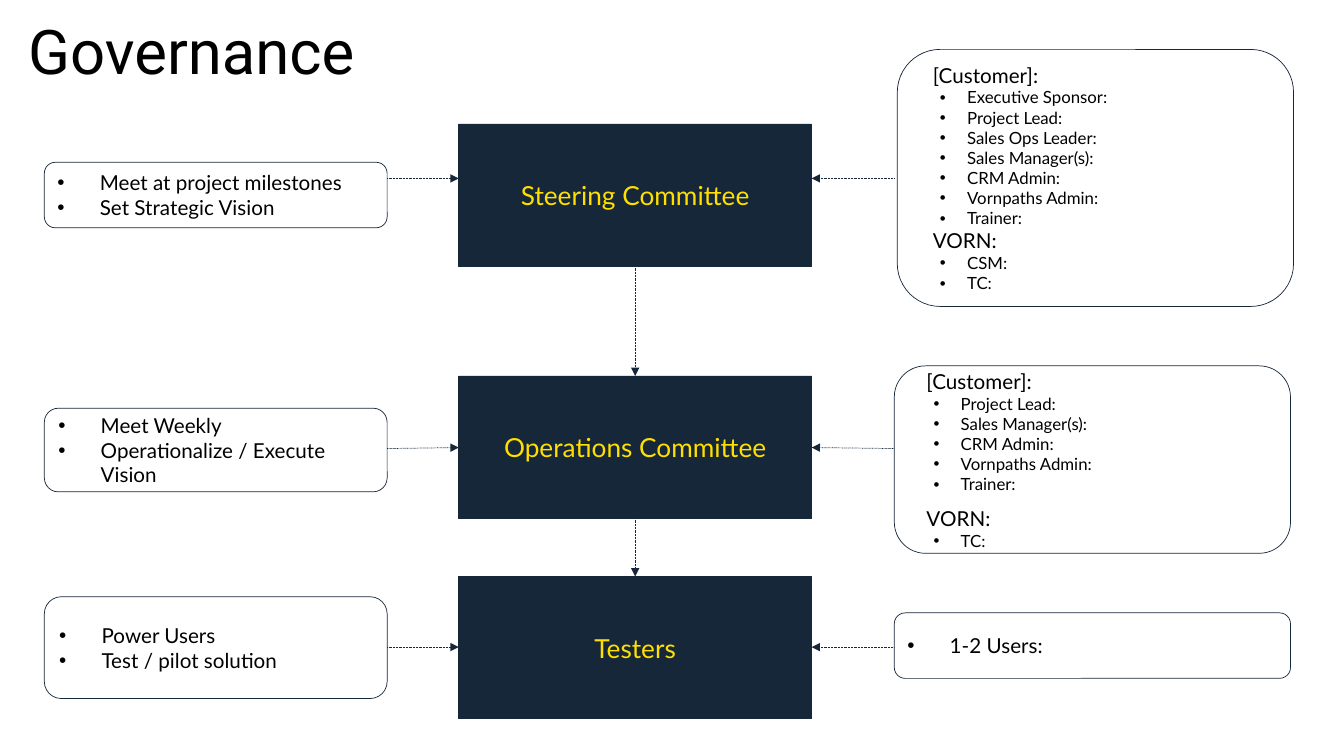
from lxml import etree
from pptx import Presentation
from pptx.dml.color import RGBColor
from pptx.enum.dml import MSO_LINE
from pptx.enum.shapes import MSO_CONNECTOR, MSO_SHAPE
from pptx.enum.text import MSO_ANCHOR, MSO_AUTO_SIZE, PP_ALIGN
from pptx.oxml.ns import qn
from pptx.util import Pt

RECTANGLE, ROUNDED = MSO_SHAPE.RECTANGLE, MSO_SHAPE.ROUNDED_RECTANGLE
STRAIGHT = MSO_CONNECTOR.STRAIGHT
DOTTED = MSO_LINE.ROUND_DOT
LEFT, CENTER = PP_ALIGN.LEFT, PP_ALIGN.CENTER
TOP, MIDDLE = MSO_ANCHOR.TOP, MSO_ANCHOR.MIDDLE
NO_AUTOFIT = MSO_AUTO_SIZE.NONE

PX = 9144
COLORS = {"navy": "162739", "yellow": "FFDF00", "white": "FFFFFF", "black": "000000"}
BODY_FONT, TITLE_FONT = "Lato", "Roboto"
TITLE_SIZE, COMMITTEE_SIZE, BODY_SIZE, ROLE_SIZE = 44, 18.7, 14.7, 12

COMMITTEE_X, COMMITTEE_W, COMMITTEE_H = 455, 350, 141
DUTIES_X, DUTIES_W = 44, 340
MEMBERS_X, MEMBERS_W = 887, 393
FLOW_X = COMMITTEE_X + COMMITTEE_W // 2

TIERS = [
    {
        "name": "Steering Committee", "top": 123, "arrow_y": (177, 177),
        "duties": (161, 65, ["Meet at project milestones", "Set Strategic Vision"]),
    },
    {
        "name": "Operations Committee", "top": 373, "arrow_y": (445, 444),
        "duties": (405, 83, ["Meet Weekly", "Operationalize / Execute Vision"]),
    },
    {
        "name": "Testers", "top": 572, "arrow_y": (642, 642),
        "duties": (592, 101, ["Power Users", "Test / pilot solution"]),
    },
]

STEERING_TEAMS = [
    ("[Customer]:", ["Executive Sponsor:", "Project Lead:", "Sales Ops Leader:",
                     "Sales Manager(s):", "CRM Admin:", "Vornpaths Admin:", "Trainer:"]),
    ("VORN:", ["CSM:", "TC:"]),
]
OPERATIONS_TEAMS = [
    ("[Customer]:", ["Project Lead:", "Sales Manager(s):", "CRM Admin:",
                     "Vornpaths Admin:", "Trainer:"]),
    ("VORN:", ["TC:"]),
]


def rgb(color):
    return RGBColor.from_string(COLORS[color])


def add_run(paragraph, text, size, color, font=BODY_FONT):
    run = paragraph.add_run()
    run.text = text
    run.font.size = Pt(size)
    run.font.name = font
    run.font.color.rgb = rgb(color)


def add_box(slide, preset, x, y, w, h, fill):
    box = slide.shapes.add_shape(preset, x * PX, y * PX, w * PX, h * PX)
    box.shadow.inherit = False
    box.fill.solid()
    box.fill.fore_color.rgb = rgb(fill)
    box.line.color.rgb = rgb("navy")
    box.line.width = Pt(0.5)
    frame = box.text_frame
    frame.word_wrap = True
    frame.vertical_anchor = MIDDLE
    return frame


def add_line(frame, text, size, margin, hanging=0):
    first = frame.paragraphs[0]
    paragraph = frame.add_paragraph() if first.runs else first
    paragraph.alignment = LEFT
    properties = paragraph._p.get_or_add_pPr()
    properties.set("marL", str(margin * PX))
    properties.set("indent", str(-hanging * PX))
    if hanging:
        etree.SubElement(properties, qn("a:buFont"), typeface="Arial")
        etree.SubElement(properties, qn("a:buChar"), char="•")
    add_run(paragraph, text, size, "black")
    return paragraph


def add_title(slide, text):
    title = slide.shapes.title
    title.left, title.top, title.width, title.height = (n * PX for n in (28, 21, 1278, 80))
    frame = title.text_frame
    frame.margin_left = frame.margin_top = frame.margin_right = frame.margin_bottom = 0
    frame.auto_size = NO_AUTOFIT
    frame.vertical_anchor = TOP
    paragraph = frame.paragraphs[0]
    paragraph.alignment = LEFT
    paragraph.line_spacing = 0.9
    add_run(paragraph, text, TITLE_SIZE, "black", TITLE_FONT)


def add_committee(slide, name, top):
    frame = add_box(slide, RECTANGLE, COMMITTEE_X, top, COMMITTEE_W, COMMITTEE_H, "navy")
    paragraph = frame.paragraphs[0]
    paragraph.alignment = CENTER
    add_run(paragraph, name, COMMITTEE_SIZE, "yellow")


def add_bullet_card(slide, x, y, w, h, items):
    frame = add_box(slide, ROUNDED, x, y, w, h, "white")
    for item in items:
        add_line(frame, item, BODY_SIZE, 42, 42)


def add_team_card(slide, x, y, h, teams, team_gap=0):
    frame = add_box(slide, ROUNDED, x, y, MEMBERS_W, h, "white")
    for index, (team, roles) in enumerate(teams):
        heading = add_line(frame, team, BODY_SIZE, 13)
        heading.space_before = Pt(team_gap if index else 0)
        for role in roles:
            add_line(frame, role, ROLE_SIZE, 47, 27)


def add_arrow(slide, x1, y1, x2, y2):
    arrow = slide.shapes.add_connector(STRAIGHT, x1 * PX, y1 * PX, x2 * PX, y2 * PX)
    arrow.line.color.rgb = rgb("navy")
    arrow.line.width = Pt(0.5)
    arrow.line.dash_style = DOTTED
    etree.SubElement(arrow.line._get_or_add_ln(), qn("a:tailEnd"), type="triangle")
    etree.SubElement(arrow._element.spPr, qn("a:effectLst"))


def main():
    """Build the governance slide and save it."""
    deck = Presentation()
    deck.slide_width, deck.slide_height = 1333 * PX, 750 * PX
    slide = deck.slides.add_slide(deck.slide_layouts[5])
    add_title(slide, "Governance")

    for tier in TIERS:
        add_committee(slide, tier["name"], tier["top"])
        y, h, duties = tier["duties"]
        add_bullet_card(slide, DUTIES_X, y, DUTIES_W, h, duties)
        outer_y, inner_y = tier["arrow_y"]
        add_arrow(slide, DUTIES_X + DUTIES_W, outer_y, COMMITTEE_X, inner_y)
        add_arrow(slide, MEMBERS_X, outer_y, COMMITTEE_X + COMMITTEE_W, inner_y)

    for upper, lower in zip(TIERS, TIERS[1:]):
        add_arrow(slide, FLOW_X, upper["top"] + COMMITTEE_H, FLOW_X, lower["top"])

    add_team_card(slide, 890, 49, 255, STEERING_TEAMS)
    add_team_card(slide, MEMBERS_X, 363, 186, OPERATIONS_TEAMS, 8)
    add_bullet_card(slide, MEMBERS_X, 608, MEMBERS_W, 65, ["1-2 Users:"])
    deck.save("out.pptx")


if __name__ == "__main__":
    main()
